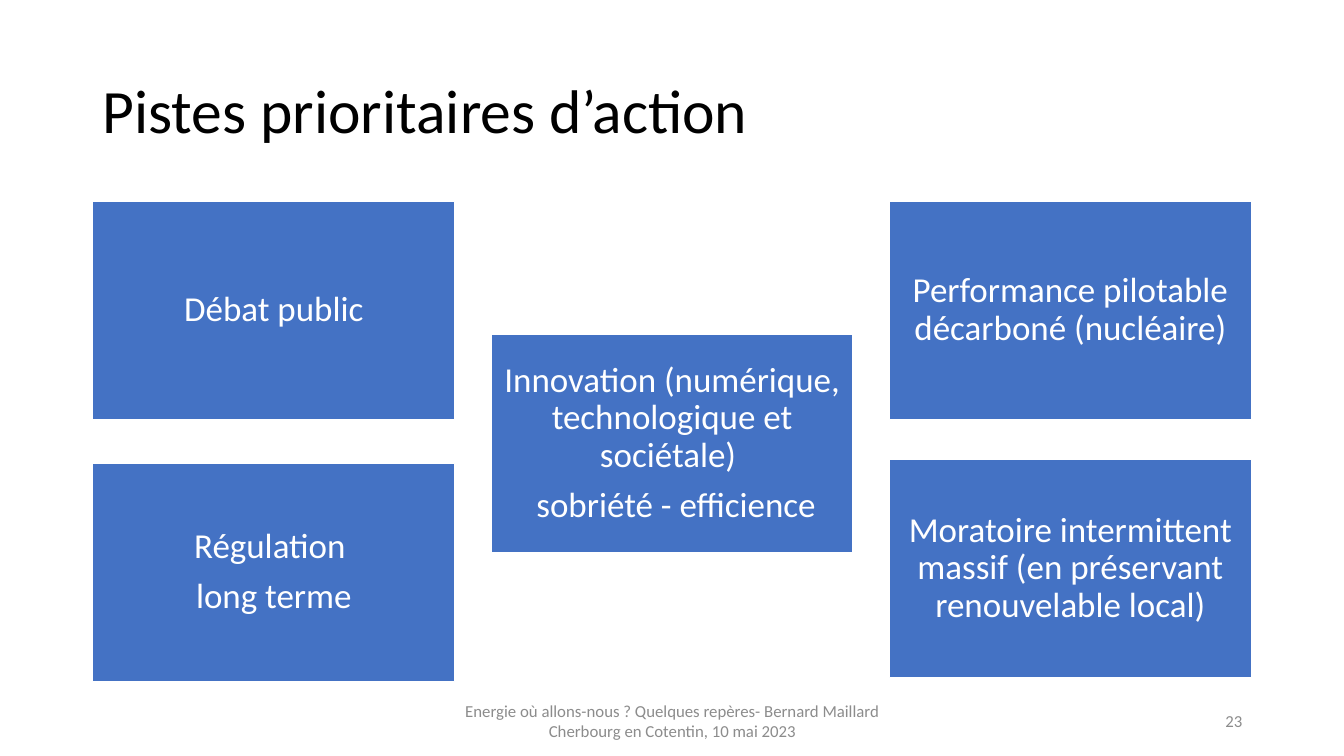
"""Build the slide of priority lines of action."""
from pptx import Presentation, util as u
from pptx.dml.color import RGBColor
from pptx.enum import shapes, text

COLORS = {"box": "4472C4", "white": "FFFFFF", "title": "000000", "footer": "8C8C8C"}
ALIGN = text.PP_ALIGN


class Deck:
    """Hold the style and the current slide."""

    def __init__(self, font="Calibri"):
        """Start a wide presentation with one blank slide."""
        self.font = font
        self.prs = Presentation()
        self.prs.slide_width = u.Inches(13.33)
        self.prs.slide_height = u.Inches(7.5)
        self.s = self.prs.slides.add_slide(self.prs.slide_layouts[6])

    def color(self, name):
        """Return a named colour."""
        return RGBColor.from_string(COLORS[name])

    def set_text(self, sp, lines, size, color, align, spacing=1.0, after=0):
        """Fill a shape with styled paragraphs."""
        tf = sp.text_frame
        tf.word_wrap = True
        tf.vertical_anchor = text.MSO_ANCHOR.MIDDLE
        tf.text = "\n".join(lines)
        for p in tf.paragraphs:
            p.alignment = align
            p.line_spacing = spacing
            p.space_after = u.Pt(after)
            p.font.name = self.font
            p.font.size = u.Pt(size)
            p.font.color.rgb = self.color(color)
        return tf

    def label(self, at, line, size, color, align, spacing=1.0):
        """Add a text box."""
        sp = self.s.shapes.add_textbox(*map(u.Inches, at))
        self.set_text(sp, [line], size, color, align, spacing)

    def box(self, left, top, lines, width=3.59, height=2.16):
        """Add a filled rectangle with centred text."""
        at = map(u.Inches, (left, top, width, height))
        sp = self.s.shapes.add_shape(shapes.MSO_SHAPE.RECTANGLE, *at)
        sp.shadow.inherit = False
        sp.fill.solid()
        sp.fill.fore_color.rgb = self.color("box")
        sp.line.color.rgb = self.color("white")
        sp.line.width = u.Pt(1)
        tf = self.set_text(sp, lines, 25, "white", ALIGN.CENTER, 0.9, 8.75)
        tf.margin_left = tf.margin_right = u.Inches(0.1)
        tf.margin_top = tf.margin_bottom = u.Inches(0.1)


def main():
    """Lay out the title, the boxes and the footer."""
    deck = Deck()
    deck.label((0.92, 0.4, 11.5, 1.45), "Pistes prioritaires d’action",
               44, "title", ALIGN.LEFT, 0.9)
    left, middle, right = (0.92 + 3.95 * i for i in range(3))
    for x, y, lines in (
        (left, 4.6, ["Régulation ", "long terme"]),
        (left, 2, ["Débat public"]),
        (right, 4.56, ["Moratoire intermittent massif (en préservant renouvelable local)"]),
        (middle, 3.32, ["Innovation (numérique, technologique et sociétale) ",
                        " sobriété - efficience"]),
        (right, 2, ["Performance pilotable décarboné (nucléaire)"]),
    ):
        deck.box(x, y, lines)
    deck.label((4.42, 6.95, 4.5, 0.4),
               "Energie où allons-nous ? Quelques repères- Bernard Maillard\v"
               "Cherbourg en Cotentin, 10 mai 2023", 12, "footer", ALIGN.CENTER)
    deck.label((9.42, 6.95, 3, 0.4), "23", 12, "footer", ALIGN.RIGHT)
    deck.prs.save("out.pptx")


if __name__ == "__main__":
    main()
